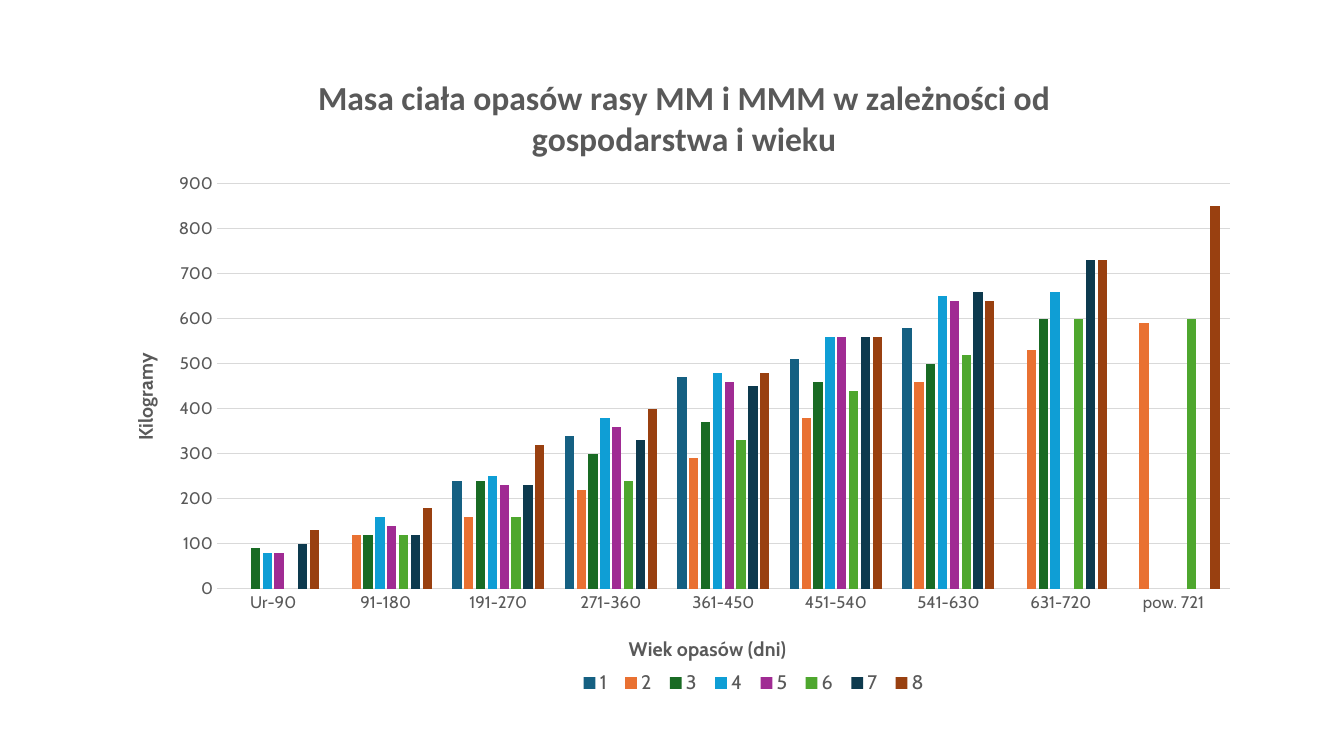
"""Build a slide with a clustered column chart of cattle body mass by farm and age."""
from lxml.etree import SubElement
from pptx import Presentation
from pptx.chart.data import CategoryChartData
from pptx.dml.color import RGBColor
from pptx.enum.chart import XL_CHART_TYPE, XL_LEGEND_POSITION, XL_TICK_MARK
from pptx.oxml.ns import qn
from pptx.util import Emu, Pt

TITLE = "Masa ciała opasów rasy MM i MMM w zależności od gospodarstwa i wieku"
AGE_TITLE = "Wiek opasów (dni)"
MASS_TITLE = "Kilogramy"
AGES = ["Ur-90", "91-180", "191-270", "271-360", "361-450",
        "451-540", "541-630", "631-720", "pow. 721"]
FARMS = {
    "1": [None, None, 240, 340, 470, 510, 580, None, None],
    "2": [None, 120, 160, 220, 290, 380, 460, 530, 590],
    "3": [90, 120, 240, 300, 370, 460, 500, 600, None],
    "4": [80, 160, 250, 380, 480, 560, 650, 660, None],
    "5": [80, 140, 230, 360, 460, 560, 640, None, None],
    "6": [None, 120, 160, 240, 330, 440, 520, 600, 600],
    "7": [100, 120, 230, 330, 450, 560, 660, 730, None],
    "8": [130, 180, 320, 400, 480, 560, 640, 730, 850],
}
COLORS = {
    "1": "156082", "2": "E97132", "3": "196B24", "4": "0F9ED5",
    "5": "A02B93", "6": "4EA72E", "7": "0D3A4E", "8": "994010",
    "text": "595959", "grid": "D9D9D9",
}
FORMATS = {
    "title": {"name": "Calibri", "size": Pt(24), "bold": True},
    "axis title": {"name": "Cabin", "size": Pt(14), "bold": True},
    "labels": {"name": "Cabin", "size": Pt(12), "bold": False},
    "legend": {"name": "Cabin", "size": Pt(14), "bold": False},
}
SLIDE_SIZE = (1344, 756)
CHART_BOX = (102, 39, 1152, 677)
PLOT_BOX = (217, 184, 1013, 405)
LEGEND_BOX = (572, 668, 364, 30)
TITLE_AT = (312, 69)
AGE_TITLE_AT = (625, 632)
MASS_TITLE_AT = (128, 349)


def px(length):
    return Emu(round(length * 914400 / 100.8))


def rgb(name):
    return RGBColor.from_string(COLORS[name])


def style(font, kind):
    for key, value in FORMATS[kind].items():
        setattr(font, key, value)
    font.color.rgb = rgb("text")


def write_title(holder, text, kind):
    frame = holder.text_frame
    frame.text = text
    style(frame.paragraphs[0].runs[0].font, kind)


def place(element, index, box, inner=False):
    for old in element.findall(qn("c:layout")):
        element.remove(old)
    layout = SubElement(element, qn("c:layout"))
    element.insert(index, layout)
    manual = SubElement(layout, qn("c:manualLayout"))
    left, top, width, height = CHART_BOX
    fractions = [(box[0] - left) / width, (box[1] - top) / height]
    fractions += [size / whole for size, whole in zip(box[2:], (width, height))]
    settings = [("layoutTarget", "inner")] if inner else []
    settings += [("xMode", "edge"), ("yMode", "edge")]
    settings += [(key, f"{value:.4f}") for key, value in zip("xywh", fractions)]
    for key, value in settings:
        SubElement(manual, qn(f"c:{key}")).set("val", value)


deck = Presentation()
deck.slide_width, deck.slide_height = map(px, SLIDE_SIZE)
page = deck.slides.add_slide(deck.slide_layouts[6])

data = CategoryChartData()
data.categories = AGES
for farm, masses in FARMS.items():
    data.add_series(farm, masses)
chart = page.shapes.add_chart(
    XL_CHART_TYPE.COLUMN_CLUSTERED, *map(px, CHART_BOX), data).chart
style(chart.font, "labels")

chart.has_title = True
write_title(chart.chart_title, TITLE, "title")
chart.chart_title.include_in_layout = False

plot = chart.plots[0]
plot.vary_by_categories = False
plot.gap_width = 219
plot.overlap = -27
for series in plot.series:
    series.format.fill.solid()
    series.format.fill.fore_color.rgb = rgb(series.name)

age_axis, mass_axis = chart.category_axis, chart.value_axis
for axis, text in ((age_axis, AGE_TITLE), (mass_axis, MASS_TITLE)):
    axis.major_tick_mark = axis.minor_tick_mark = XL_TICK_MARK.NONE
    style(axis.tick_labels.font, "labels")
    write_title(axis.axis_title, text, "axis title")
mass_axis.minimum_scale, mass_axis.maximum_scale = 0, 900
mass_axis.major_unit = 100
mass_axis.format.line.fill.background()
mass_axis.axis_title.text_frame._txBody.bodyPr.set("rot", "-5400000")
for line in (age_axis.format.line, mass_axis.major_gridlines.format.line):
    line.color.rgb = rgb("grid")
    line.width = Pt(0.75)

chart.has_legend = True
legend = chart.legend
legend.position = XL_LEGEND_POSITION.BOTTOM
legend.include_in_layout = False
style(legend.font, "legend")

place(chart._chartSpace.chart.plotArea, 0, PLOT_BOX, inner=True)
place(legend._element, 1, LEGEND_BOX)
place(chart.chart_title._element, 1, TITLE_AT)
place(age_axis.axis_title._element, 1, AGE_TITLE_AT)
place(mass_axis.axis_title._element, 1, MASS_TITLE_AT)

deck.save("out.pptx")
